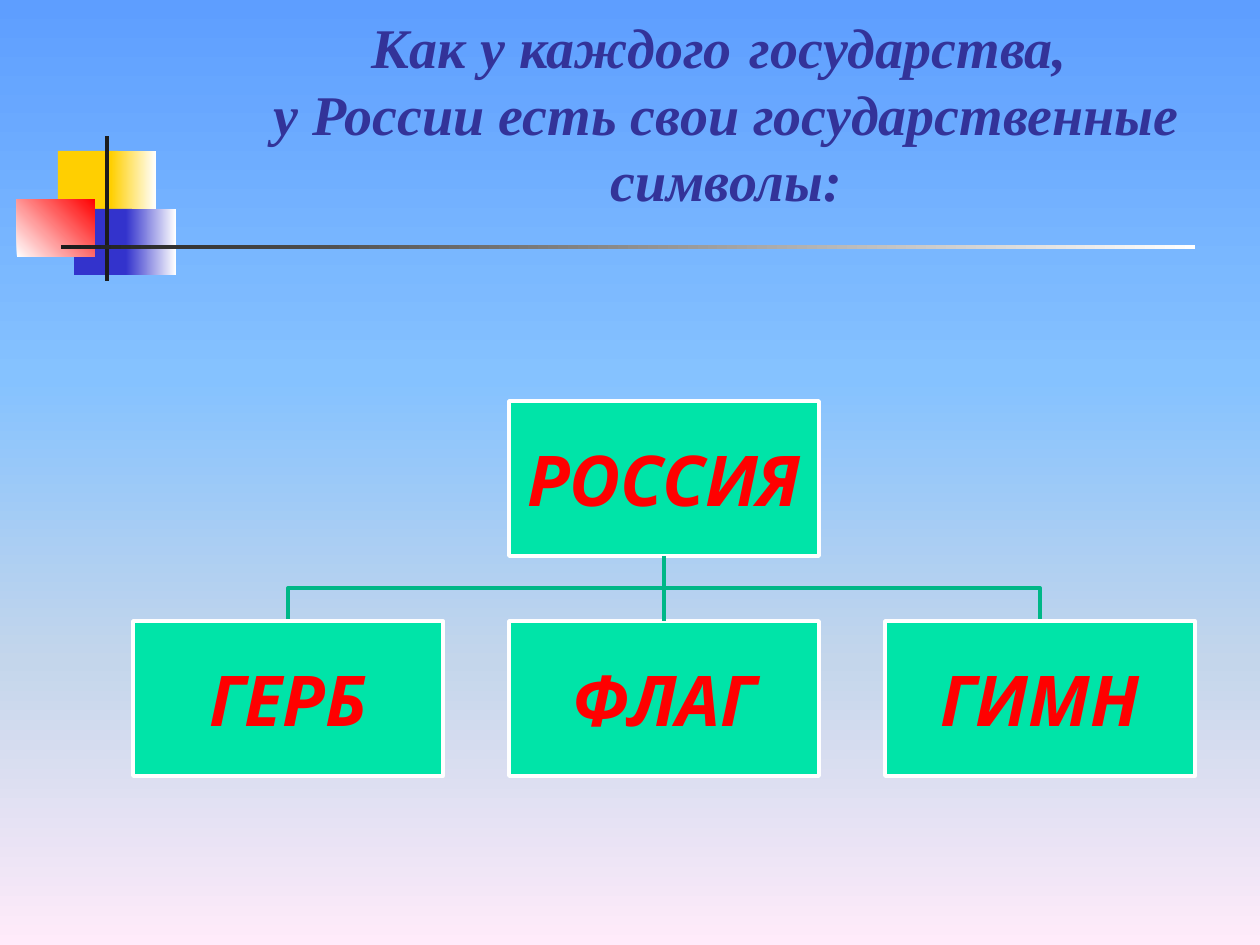
from lxml import etree
from pptx import Presentation
from pptx import util as u
from pptx.dml.color import RGBColor
from pptx.enum import shapes, text
from pptx.oxml.ns import qn

THEME = {
    "sky": [(0, "5E9EFF"), (40, "85C2FF"), (70, "C4D6EB"), (100, "FFEBFA")],
    "yellow": "FFCF01", "blue": "3333CC", "red": "FF0000",
    "dark": "1C1C1C", "white": "FFFFFF",
    "title": "333399", "node": "00E4A8", "link": "00B787",
    "title_font": "Times New Roman", "node_font": "Karla",
    "title_size": 32, "title_leading": 38, "node_size": 40, "line": 2,
}

TITLE = "Как у каждого \tгосударства, \vу России есть свои государственные символы:"
ROOT = "РОССИЯ"
SYMBOLS = ["ГЕРБ", "ФЛАГ", "ГИМН"]

ORNAMENT = [
    ((58, 151, 60, 66), ["yellow"], 0),
    ((111, 151, 45, 66), ["yellow", "white"], 0),
    ((74, 209, 58, 66), ["blue"], 0),
    ((126, 209, 50, 66), ["blue", "white"], 0),
    ((17, 199, 78, 58), ["white", "red"], 315),
    ((105, 136, 4, 145), ["dark"], 0),
    ((61, 245, 1134, 4), ["dark", "white"], 0),
]

SLIDE = (1260, 945)
TITLE_BOX = (193, 0, 1067, 283)
TITLE_BOTTOM = 70
NODE_W, NODE_H = 310, 155
NODE_LEFT, NODE_STEP = 133, 376
ROOT_TOP, SYMBOL_TOP = 401, 621
NODE_INSET = 4
PX = u.Inches(1) / 126


def px(value):
    return u.Emu(round(value * PX))


def color(value):
    return RGBColor.from_string(value)


def paint_gradient(fill, owner, stops, angle):
    fill.gradient()
    fill.gradient_angle = -angle % 360
    stop_list = next(owner.iter(qn("a:gsLst")))
    for old in list(stop_list):
        stop_list.remove(old)
    for position, value in stops:
        stop = etree.SubElement(stop_list, qn("a:gs"), pos=str(position * 1000))
        etree.SubElement(stop, qn("a:srgbClr"), val=value)


def write(frame, content, *, font, size, ink, anchor, insets, leading=None):
    frame.word_wrap = True
    frame.auto_size = text.MSO_AUTO_SIZE.NONE
    frame.vertical_anchor = anchor
    (frame.margin_left, frame.margin_top,
     frame.margin_right, frame.margin_bottom) = map(px, insets)
    frame.text = content
    para = frame.paragraphs[0]
    para.alignment = text.PP_ALIGN.CENTER
    if leading:
        para.line_spacing = u.Pt(leading)
    for span in para.runs:
        span.font.name = font
        span.font.size = u.Pt(size)
        span.font.bold = span.font.italic = True
        span.font.color.rgb = color(ink)


def add_box(page, bounds):
    box = page.shapes.add_shape(shapes.MSO_SHAPE.RECTANGLE, *map(px, bounds))
    box.shadow.inherit = False
    return box


def style_line(line, ink):
    line.color.rgb = color(ink)
    line.width = u.Pt(THEME["line"])


def add_ornament(page):
    for bounds, names, angle in ORNAMENT:
        box = add_box(page, bounds)
        box.line.fill.background()
        inks = [THEME[name] for name in names]
        if len(inks) == 1:
            box.fill.solid()
            box.fill.fore_color.rgb = color(inks[0])
        else:
            paint_gradient(box.fill, box.element, list(zip((0, 100), inks)), angle)


def add_node(page, label, column, top):
    box = add_box(page, (NODE_LEFT + column * NODE_STEP, top, NODE_W, NODE_H))
    box.fill.solid()
    box.fill.fore_color.rgb = color(THEME["node"])
    style_line(box.line, THEME["white"])
    write(box.text_frame, label, font=THEME["node_font"], size=THEME["node_size"],
          ink=THEME["red"], anchor=text.MSO_ANCHOR.MIDDLE, insets=[NODE_INSET] * 4)
    return box


def add_branch(page, column):
    start_x, end_x = (NODE_LEFT + i * NODE_STEP + NODE_W / 2 for i in (1, column))
    start_y = ROOT_TOP + NODE_H
    middle = (start_y + SYMBOL_TOP) / 2
    builder = page.shapes.build_freeform(start_x, start_y, scale=PX)
    builder.add_line_segments(
        [(start_x, middle), (end_x, middle), (end_x, SYMBOL_TOP)], close=False)
    branch = builder.convert_to_shape()
    branch.shadow.inherit = False
    branch.fill.background()
    style_line(branch.line, THEME["link"])


def add_stem(page, root, symbol):
    stem = page.shapes.add_connector(shapes.MSO_CONNECTOR.STRAIGHT, 0, 0, 0, 0)
    stem.begin_connect(root, 2)
    stem.end_connect(symbol, 0)
    style_line(stem.line, THEME["link"])
    etree.SubElement(stem.element.spPr, qn("a:effectLst"))


def main():
    deck = Presentation()
    deck.slide_width, deck.slide_height = map(px, SLIDE)
    page = deck.slides.add_slide(deck.slide_layouts[5])
    paint_gradient(page.background.fill, page.element, THEME["sky"], 90)
    add_ornament(page)

    title = page.shapes.title
    title.left, title.top, title.width, title.height = map(px, TITLE_BOX)
    write(title.text_frame, TITLE, font=THEME["title_font"], size=THEME["title_size"],
          ink=THEME["title"], anchor=text.MSO_ANCHOR.BOTTOM,
          insets=(13, 6, 13, TITLE_BOTTOM), leading=THEME["title_leading"])

    for column in (0, 2):
        add_branch(page, column)
    root = add_node(page, ROOT, 1, ROOT_TOP)
    symbols = [add_node(page, label, column, SYMBOL_TOP)
               for column, label in enumerate(SYMBOLS)]
    add_stem(page, root, symbols[1])
    deck.save("out.pptx")


if __name__ == "__main__":
    main()
